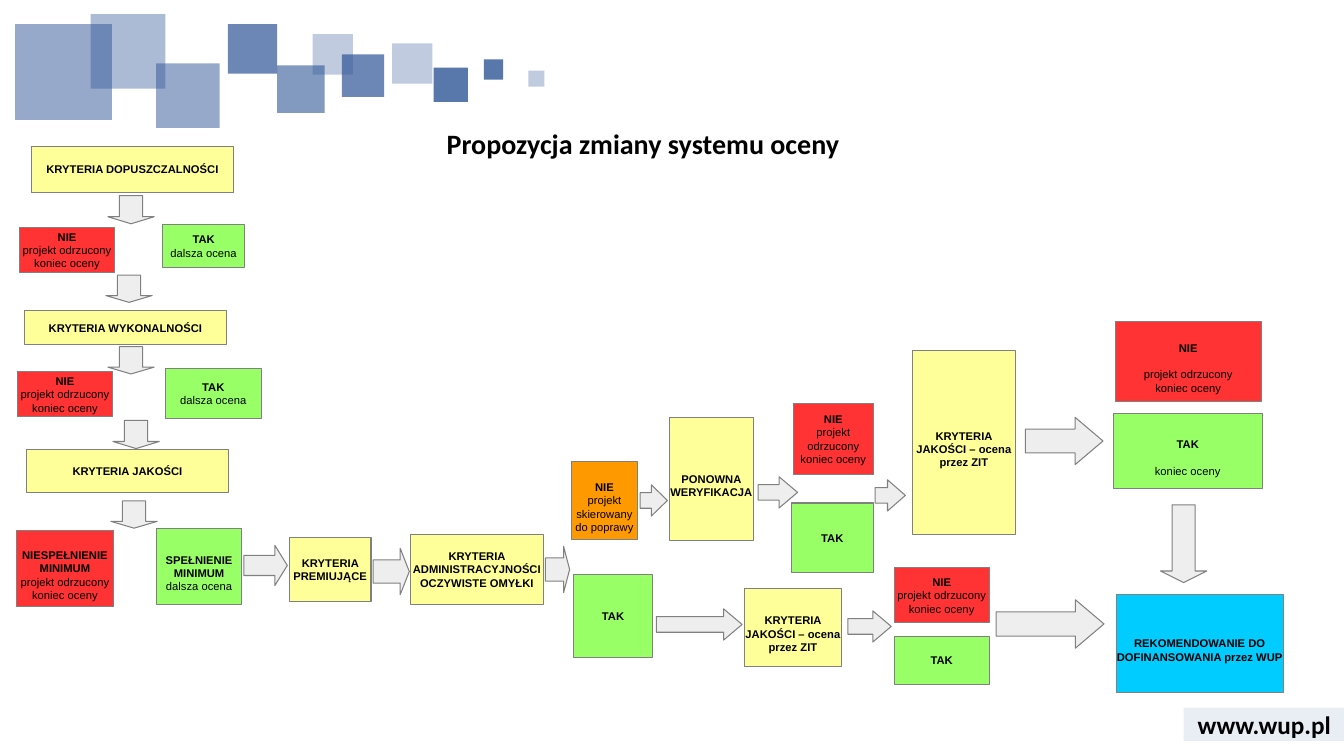
"""Builds a slide with a flow chart of the proposed project assessment system."""
from lxml import etree
from pptx import Presentation
from pptx.dml.color import RGBColor
from pptx.enum.shapes import MSO_SHAPE
from pptx.enum.text import MSO_ANCHOR, PP_ALIGN
from pptx.oxml.ns import qn
from pptx.util import Inches, Pt

RECTANGLE = MSO_SHAPE.RECTANGLE
DOWN = MSO_SHAPE.DOWN_ARROW
RIGHT = MSO_SHAPE.RIGHT_ARROW
CENTER, LEFT = PP_ALIGN.CENTER, PP_ALIGN.LEFT
MIDDLE, TOP = MSO_ANCHOR.MIDDLE, MSO_ANCHOR.TOP

COLORS = {
    "criteria": "FFFF99",
    "no": "FF3333",
    "yes": "99FF66",
    "correction": "FF9900",
    "result": "00CCFF",
    "arrow": "EEEEEE",
    "outline": "808080",
    "accent": "2F5597",
    "text": "000000",
}
TEXT_SIZE = 8
LINE_HEIGHT = 9.2

TITLE = "Propozycja zmiany systemu oceny"
WEBSITE = "www.wup.pl"

REJECTED = ["projekt odrzucony", "koniec oceny"]
FURTHER = ["dalsza ocena"]
ZIT_QUALITY = ["KRYTERIA JAKOŚCI – ocena przez ZIT"]

# (colour, (left, top, width, height), bold lines, plain lines)
CENTERED_BOXES = [
    ("criteria", (0.31, 1.45, 2.01, 0.46), ["KRYTERIA DOPUSZCZALNOŚCI"], []),
    ("no", (0.19, 2.26, 0.95, 0.44), ["NIE"], REJECTED),
    ("yes", (1.61, 2.23, 0.82, 0.42), ["TAK"], FURTHER),
    ("criteria", (0.24, 3.08, 2.01, 0.34), ["KRYTERIA WYKONALNOŚCI"], []),
    ("no", (0.17, 3.69, 0.95, 0.44), ["NIE"], REJECTED),
    ("yes", (1.64, 3.66, 0.95, 0.49), ["TAK"], FURTHER),
    ("criteria", (0.26, 4.46, 2.01, 0.43), ["KRYTERIA JAKOŚCI"], []),
    ("criteria", (2.87, 5.33, 0.81, 0.64), ["KRYTERIA PREMIUJĄCE"], []),
    ("criteria", (4.07, 5.3, 1.32, 0.7),
     ["KRYTERIA ADMINISTRACYJNOŚCI", "OCZYWISTE OMYŁKI"], []),
    ("yes", (5.69, 5.7, 0.78, 0.82), ["TAK"], []),
    ("yes", (8.87, 6.31, 0.94, 0.48), ["TAK"], []),
    ("no", (8.87, 5.63, 0.94, 0.55), ["NIE"], REJECTED),
    ("yes", (7.85, 4.99, 0.81, 0.69), ["TAK"], []),
    ("no", (7.87, 4, 0.79, 0.71), ["NIE"], REJECTED),
]
LOWERED_BOXES = [
    ("no", (0.16, 5.26, 0.97, 0.76), ["NIESPEŁNIENIE MINIMUM"], REJECTED),
    ("yes", (1.55, 5.24, 0.85, 0.76), ["SPEŁNIENIE", "MINIMUM"], FURTHER),
    ("result", (11.07, 5.9, 1.66, 0.97),
     ["REKOMENDOWANIE DO DOFINANSOWANIA przez WUP"], []),
    ("correction", (5.67, 4.58, 0.65, 0.77),
     ["NIE"], ["projekt skierowany", "do poprawy"]),
    ("criteria", (6.64, 4.14, 0.83, 1.22), ["PONOWNA WERYFIKACJA"], []),
    ("criteria", (7.38, 5.84, 0.97, 0.77), ZIT_QUALITY, []),
    ("criteria", (9.05, 3.48, 1.02, 1.82), ZIT_QUALITY, []),
]
SPACED_BOXES = [
    ("no", (11.06, 3.19, 1.45, 0.79), ["NIE"], REJECTED),
    ("yes", (11.04, 4.1, 1.48, 0.75), ["TAK"], ["koniec oceny"]),
]

# (direction, head length, list of (left, top, width, height))
ARROWS = [
    (DOWN, 0.25, [
        (1.07, 1.94, 0.46, 0.28), (1.05, 2.73, 0.46, 0.27),
        (1.07, 3.44, 0.46, 0.27), (1.12, 4.17, 0.46, 0.28),
        (1.1, 4.97, 0.46, 0.27), (11.51, 5.01, 0.46, 0.77)]),
    (RIGHT, 0.25, [(3.7, 5.44, 0.36, 0.46), (5.41, 5.42, 0.24, 0.46)]),
    (RIGHT, 0.31, [(2.42, 5.41, 0.43, 0.4)]),
    (RIGHT, 0.59, [
        (6.35, 4.81, 0.27, 0.31), (7.52, 4.73, 0.39, 0.31),
        (8.68, 4.76, 0.3, 0.31), (10.17, 4.14, 0.77, 0.47),
        (6.51, 6.04, 0.85, 0.31), (8.41, 6.06, 0.43, 0.31),
        (9.88, 5.95, 1.07, 0.48)]),
]

# (left, top, width, height), opacity in percent
SQUARES = [
    ((3.89, 0.43, 0.4, 0.4), 30), ((4.3, 0.67, 0.34, 0.34), 80),
    ((3.39, 0.54, 0.42, 0.42), 70), ((0.15, 0.24, 0.96, 0.95), 50),
    ((2.75, 0.65, 0.47, 0.47), 60), ((1.55, 0.63, 0.63, 0.64), 50),
    ((0.9, 0.14, 0.74, 0.74), 40), ((4.8, 0.59, 0.19, 0.2), 80),
    ((2.26, 0.24, 0.49, 0.49), 70), ((3.1, 0.34, 0.4, 0.4), 30),
    ((5.24, 0.7, 0.16, 0.16), 30),
]


def color(name):
    return RGBColor.from_string(COLORS[name])


def add_preset(shapes, preset, place, fill, outlined=True):
    shape = shapes.add_shape(preset, *map(Inches, place))
    shape.shadow.inherit = False
    shape.fill.solid()
    shape.fill.fore_color.rgb = color(fill)
    if outlined:
        shape.line.color.rgb = color("outline")
        shape.line.width = Pt(0.75)
    else:
        shape.line.fill.background()
    return shape


def add_tint(shapes, place, opacity):
    shape = add_preset(shapes, RECTANGLE, place, "accent", outlined=False)
    fill_color = shape.fill._xPr.find(qn("a:solidFill"))[0]
    etree.SubElement(fill_color, qn("a:alpha")).set("val", str(opacity * 1000))
    return shape


def set_margins(text_frame, horizontal, vertical):
    text_frame.margin_left = text_frame.margin_right = horizontal
    text_frame.margin_top = text_frame.margin_bottom = vertical


def format_paragraph(paragraph, font_name, size, bold, alignment):
    paragraph.alignment = alignment
    for run in paragraph.runs:
        run.font.name = font_name
        run.font.size = Pt(size)
        run.font.bold = bold
        run.font.color.rgb = color("text")


def add_box(shapes, fill, place, headings, details, lowered, spaced):
    text_frame = add_preset(shapes, RECTANGLE, place, fill).text_frame
    text_frame.word_wrap = True
    text_frame.vertical_anchor = MIDDLE
    set_margins(text_frame, 0, 0)
    if lowered:
        text_frame.margin_top = Pt(LINE_HEIGHT)
    text_frame.text = "\n".join(headings + details)
    for index, paragraph in enumerate(text_frame.paragraphs):
        format_paragraph(paragraph, "Arial", TEXT_SIZE, index < len(headings), CENTER)
        if spaced and index == len(headings):
            paragraph.space_before = Pt(LINE_HEIGHT)


def main():
    presentation = Presentation()
    presentation.slide_width = Inches(13.33)
    presentation.slide_height = Inches(7.5)
    slide = presentation.slides.add_slide(presentation.slide_layouts[5])
    shapes = slide.shapes

    title = shapes.title
    title.left, title.top, title.width, title.height = map(Inches, (4.33, 1.2, 4.64, 0.44))
    title.text_frame.text = TITLE
    title.text_frame.vertical_anchor = TOP
    title.text_frame.word_wrap = True
    set_margins(title.text_frame, Inches(0.1), Inches(0.05))
    format_paragraph(title.text_frame.paragraphs[0], "Calibri", 20, True, LEFT)

    header = shapes.add_group_shape()
    for place, opacity in SQUARES:
        add_tint(header.shapes, place, opacity)

    footer = add_tint(shapes, (11.74, 7.02, 1.6, 0.33), 10).text_frame
    footer.text = WEBSITE
    footer.vertical_anchor = MIDDLE
    set_margins(footer, Inches(0.05), 0)
    format_paragraph(footer.paragraphs[0], "Calibri", 18, True, CENTER)

    for direction, head_length, places in ARROWS:
        for place in places:
            arrow = add_preset(shapes, direction, place, "arrow")
            arrow.adjustments[0] = 0.5
            arrow.adjustments[1] = head_length

    for boxes, lowered, spaced in [
        (CENTERED_BOXES, False, False),
        (LOWERED_BOXES, True, False),
        (SPACED_BOXES, True, True),
    ]:
        for box in boxes:
            add_box(shapes, *box, lowered, spaced)

    presentation.save("out.pptx")


if __name__ == "__main__":
    main()
